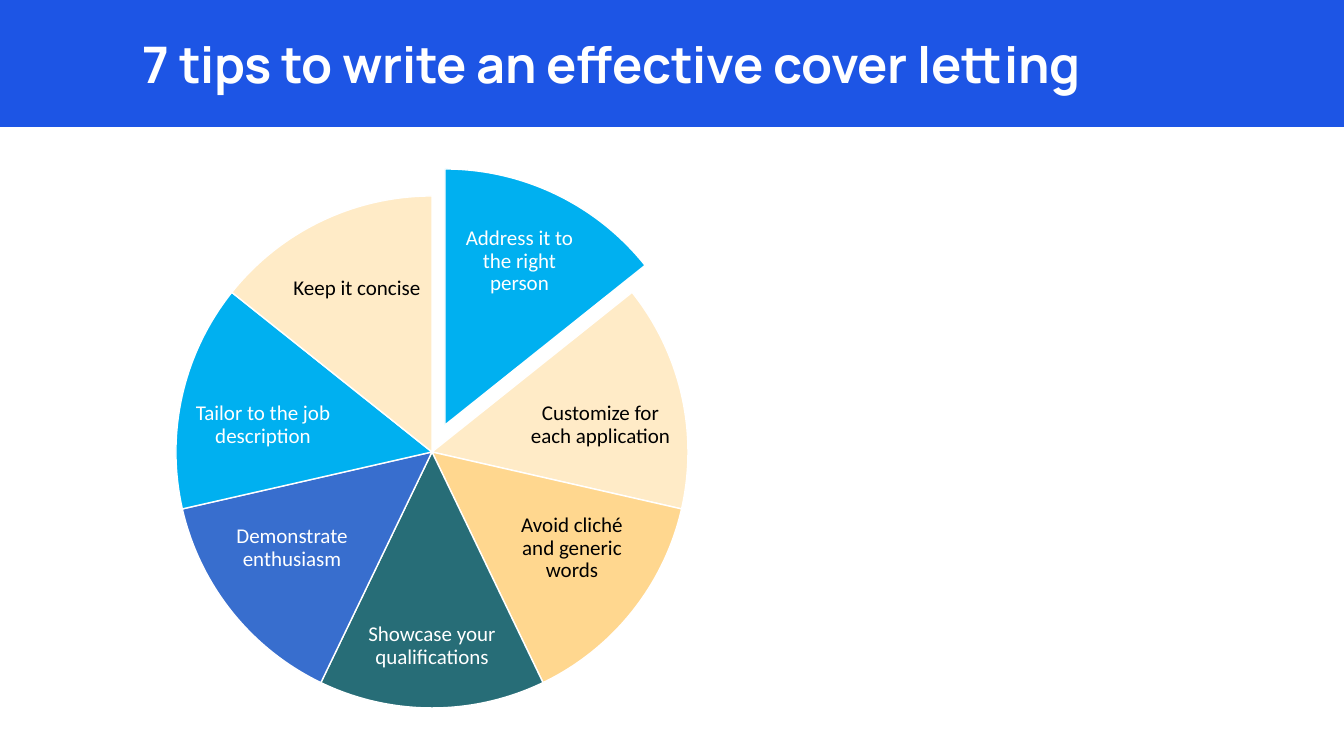
import math
from dataclasses import dataclass

from lxml import etree
from pptx import Presentation
from pptx.dml.color import RGBColor
from pptx.enum.shapes import MSO_SHAPE
from pptx.enum.text import MSO_ANCHOR, PP_ALIGN
from pptx.oxml.ns import qn
from pptx.util import Emu, Pt

RECTANGLE = MSO_SHAPE.RECTANGLE
MIDDLE, BOTTOM = MSO_ANCHOR.MIDDLE, MSO_ANCHOR.BOTTOM
CENTER = PP_ALIGN.CENTER

PX_PER_INCH = 100.8
SLIDE_W, SLIDE_H = 1344, 756
BANNER_H = 127
RADIUS = 256
PIE_CENTER = (432, 452)
PULLED_CENTER = (445, 425)

COLORS = {
    "banner": "1D55E5",
    "white": "FFFFFF",
    "black": "000000",
    "sky": "00B0F0",
    "cream": "FFEBC7",
    "sand": "FFD78F",
    "teal": "276D77",
    "blue": "386ECE",
}


@dataclass(frozen=True)
class Box:
    x: int
    y: int
    w: int
    h: int


@dataclass(frozen=True)
class Tip:
    text: str
    fill: str
    color: str
    label: Box
    center: tuple[int, int] = PIE_CENTER


TIPS = [
    Tip("Address it to the right person", "sky", "white",
        Box(452, 219, 135, 85), PULLED_CENTER),
    Tip("Customize for each application", "cream", "black", Box(528, 380, 145, 91)),
    Tip("Avoid cliché and generic words", "sand", "black", Box(507, 502, 130, 93)),
    Tip("Showcase your qualifications", "teal", "white", Box(366, 599, 132, 94)),
    Tip("Demonstrate enthusiasm", "blue", "white", Box(227, 502, 130, 93)),
    Tip("Tailor to the job description", "sky", "white", Box(191, 380, 144, 91)),
    Tip("Keep it concise", "cream", "black", Box(289, 246, 136, 85)),
]


def px(value: float) -> Emu:
    return Emu(round(value * 914400 / PX_PER_INCH))


def rgb(name: str) -> RGBColor:
    return RGBColor.from_string(COLORS[name])


def set_text(p, text: str, font: str, size: int, color: str) -> None:
    p.text = text
    p.line_spacing = 0.9
    p.font.name = font
    p.font.size = Pt(size)
    p.font.color.rgb = rgb(color)


def add_banner(s) -> None:
    banner = s.shapes.add_shape(RECTANGLE, 0, 0, px(SLIDE_W), px(BANNER_H))
    banner.shadow.inherit = False
    banner.fill.solid()
    banner.fill.fore_color.rgb = rgb("banner")
    banner.line.fill.background()


def add_title(s, text: str, box: Box) -> None:
    title = s.shapes.add_textbox(px(box.x), px(box.y), px(box.w), px(box.h))
    tf = title.text_frame
    tf.word_wrap = True
    tf.vertical_anchor = BOTTOM
    p = tf.paragraphs[0]
    set_text(p, text, "Manrope", 36, "white")
    p.font.bold = True
    p.runs[0].font._element.set("spc", "-20")


def add_path_step(path, tag: str, *points: tuple[float, float]) -> None:
    step = etree.SubElement(path, qn(tag))
    for x, y in points:
        etree.SubElement(step, qn("a:pt"), x=str(px(x)), y=str(px(y)))


def draw_slice(path, index: int) -> None:
    """Outline one slice, clockwise from twelve o'clock, with a single curve."""
    sweep = math.tau / len(TIPS)
    handle = 4 / 3 * math.tan(sweep / 4)

    def on_circle(angle: float, lead: float = 0) -> tuple[float, float]:
        sin, cos = math.sin(angle), math.cos(angle)
        return RADIUS * (1 + sin + lead * cos), RADIUS * (1 - cos + lead * sin)

    start, end = index * sweep, (index + 1) * sweep
    add_path_step(path, "a:moveTo", on_circle(start))
    add_path_step(path, "a:cubicBezTo", on_circle(start, handle),
                  on_circle(end, -handle), on_circle(end))
    add_path_step(path, "a:lnTo", (RADIUS, RADIUS))
    add_path_step(path, "a:close")


def add_tip(s, index: int, tip: Tip) -> None:
    """Add a slice whose frame is the whole circle, so slices share one centre."""
    cx, cy = tip.center
    left, top, size = px(cx - RADIUS), px(cy - RADIUS), px(2 * RADIUS)
    builder = s.shapes.build_freeform(0, 0)
    builder.add_line_segments([(size, 0), (size, size)])
    sp = builder.convert_to_shape(left, top)
    path = sp._element.find(".//" + qn("a:path"))
    for step in list(path):
        path.remove(step)
    draw_slice(path, index)

    sp.shadow.inherit = False
    sp.fill.solid()
    sp.fill.fore_color.rgb = rgb(tip.fill)
    sp.line.color.rgb = rgb("white")
    sp.line.width = Pt(1)

    label = tip.label
    tf = sp.text_frame
    tf.word_wrap = True
    tf.vertical_anchor = MIDDLE
    tf.margin_left = px(label.x) - left
    tf.margin_top = px(label.y) - top
    tf.margin_right = left + size - px(label.x + label.w)
    tf.margin_bottom = top + size - px(label.y + label.h)
    p = tf.paragraphs[0]
    p.alignment = CENTER
    set_text(p, tip.text, "Calibri", 15, tip.color)


def main() -> None:
    prs = Presentation()
    prs.slide_width, prs.slide_height = px(SLIDE_W), px(SLIDE_H)
    s = prs.slides.add_slide(prs.slide_layouts[6])
    add_banner(s)
    add_title(s, "7 tips to write an effective cover letting", Box(133, 14, 1107, 85))
    for index, tip in enumerate(TIPS):
        add_tip(s, index, tip)
    prs.save("out.pptx")


if __name__ == "__main__":
    main()
